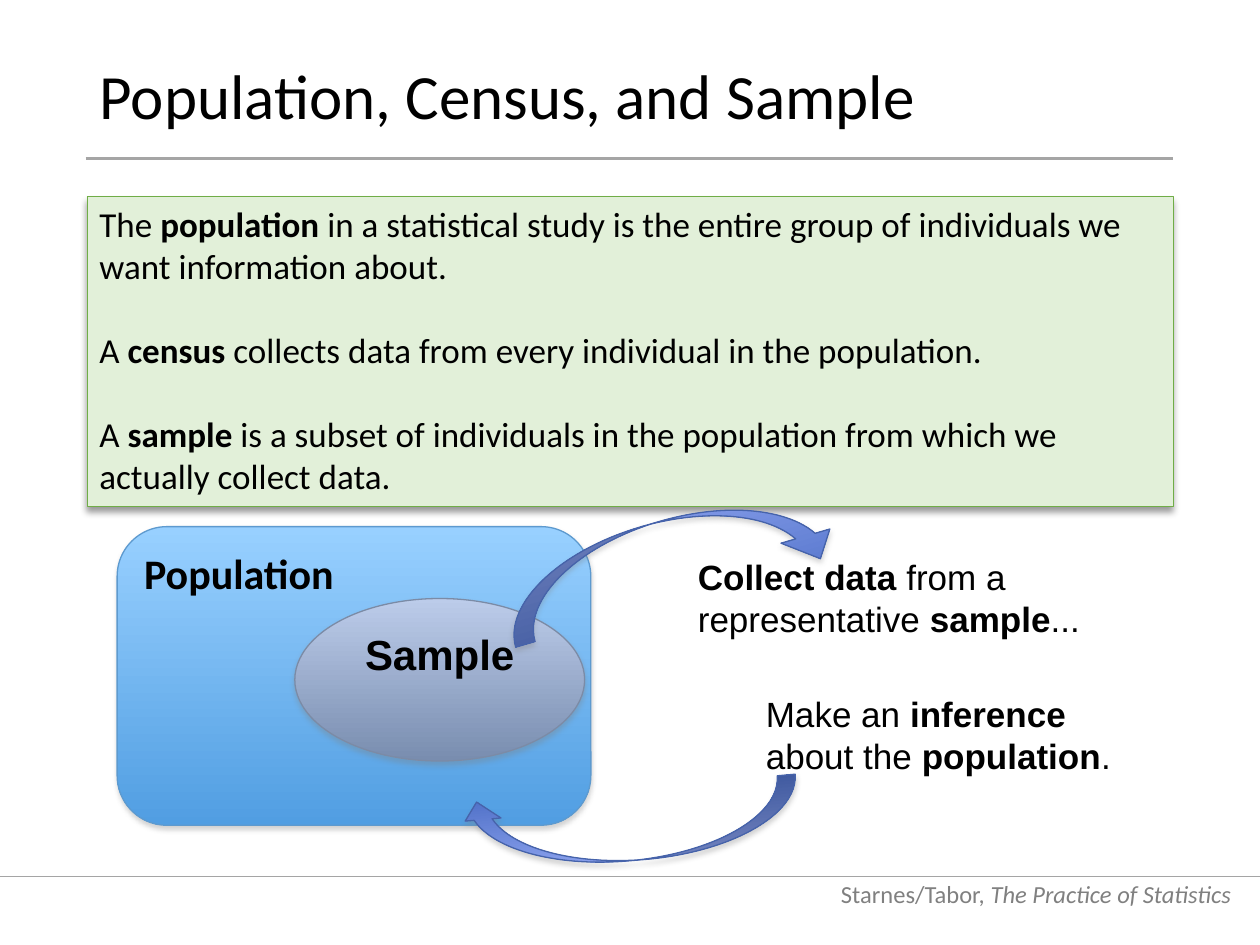
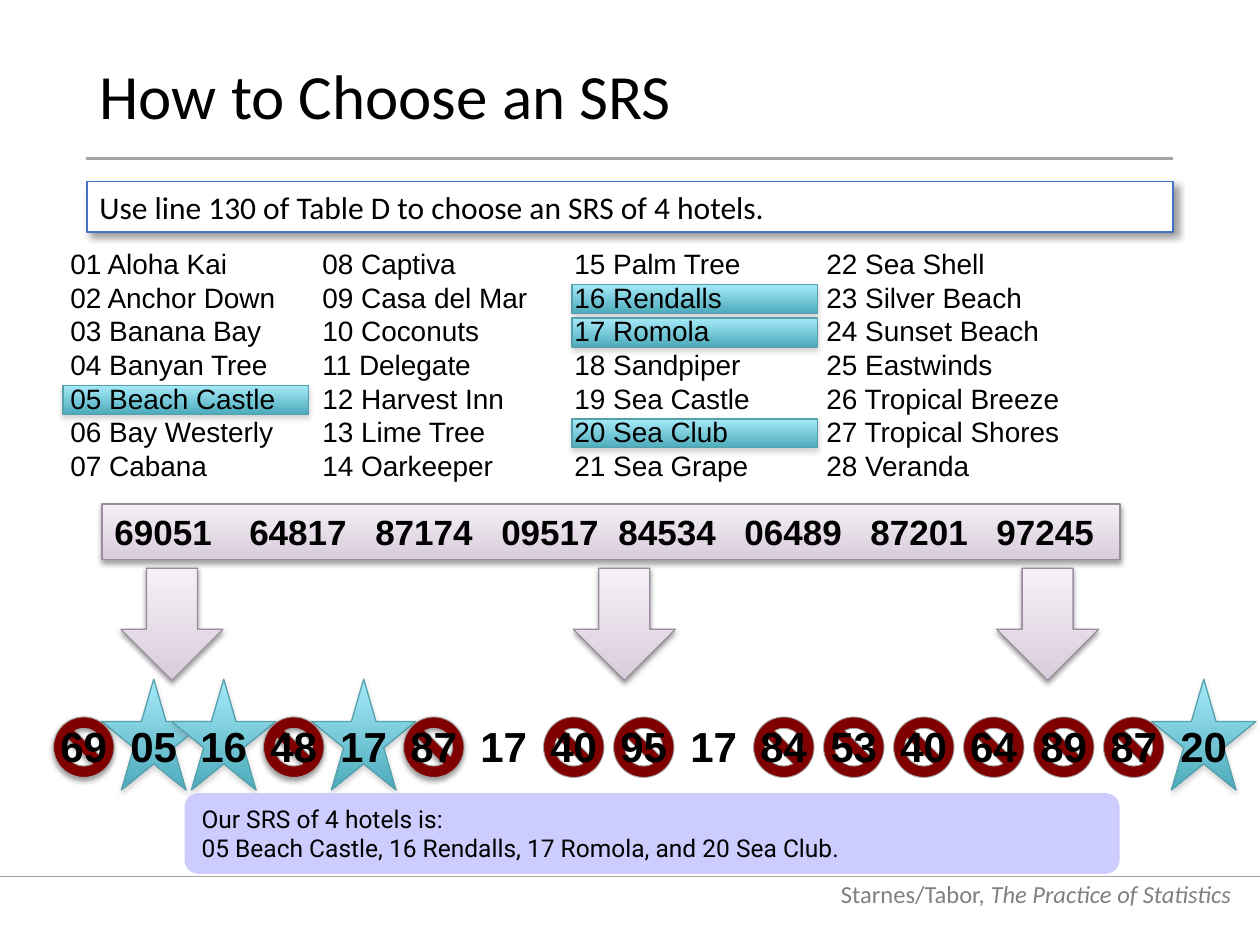
from lxml import etree
from pptx import Presentation, util as u
from pptx.dml.color import RGBColor
from pptx.enum import shapes, text
from pptx.oxml.ns import qn

COLORS = {
    "text": "000000", "footer": "808080", "rule": "A5A5A5",
    "green": "E2F0D9", "green_line": "70AD47",
    "white": "FFFFFF", "blue_line": "4472C4", "lilac": "CCCCFF",
    "red": "800000", "sign_line": "A1A1A1",
}
# Top colour, bottom colour, outline
GRADIENTS = {
    "sky": ("98D0FF", "519EE2", "5D9ACF"),
    "steel": ("BCCCEA", "798DAF", "7B8BA6"),
    "arrow": ("A1B3FB", "3B60BB", "4663AA"),
    "teal": ("A6EAF9", "4DABBB", "56A0AC"),
    "mauve": ("F4F1F5", "D9CCDC", "9A8C9D"),
}
# Colour, opacity %, blur, distance, direction
SOFT = ("808080", 35, 3.1, 1.8, 90)
DARK = ("000000", 38, 3.1, 1.6, 90)
BELOW = ("000000", 40, 4, 3, 90)
CORNER = ("000000", 40, 4, 3, 45)

WIDTH, HEIGHT = u.Inches(10), u.Inches(7.5)
COL, ROW = WIDTH / 100, HEIGHT / 75  # grid of 100 columns by 75 rows
SHAPE = shapes.MSO_SHAPE

HOTELS = [
    "Aloha Kai", "Anchor Down", "Banana Bay", "Banyan Tree", "Beach Castle",
    "Bay Westerly", "Cabana", "Captiva", "Casa del Mar", "Coconuts",
    "Delegate", "Harvest Inn", "Lime Tree", "Oarkeeper", "Palm Tree",
    "Rendalls", "Romola", "Sandpiper", "Sea Castle", "Sea Club", "Sea Grape",
    "Sea Shell", "Silver Beach", "Sunset Beach", "Eastwinds",
    "Tropical Breeze", "Tropical Shores", "Veranda",
]
PER_COLUMN = 7
CHOSEN = [5, 16, 17, 20]
DIGITS = ["69051", "64817", "87174", "09517", "84534", "06489", "87201", "97245"]
DRAWS = "69 05 16 48 17 87 17 40 95 17 84 53 40 64 89 87 20".split()


def rgb(name):
    return RGBColor.from_string(COLORS.get(name, name))


def inside(box, left, top, width, height):
    """Place a part relative to the corner of a region."""
    return box[0] + left, box[1] + top, width, height


def emu(box):
    return [round(n * unit) for n, unit in zip(box, (COL, ROW, COL, ROW))]


def add_shadow(sp, color, opacity, blur, distance, direction):
    effects = sp._element.spPr.find(qn("a:effectLst"))
    outer = etree.SubElement(
        effects, qn("a:outerShdw"), blurRad=str(u.Pt(blur)),
        dist=str(u.Pt(distance)), dir=str(direction * 60000), rotWithShape="0")
    clr = etree.SubElement(outer, qn("a:srgbClr"), val=color)
    etree.SubElement(clr, qn("a:alpha"), val=str(opacity * 1000))


def add_shape(s, kind, box, fill, line=None, weight=0.75, shadow=None):
    sp = s.shapes.add_shape(kind, *emu(box))
    if fill in GRADIENTS:
        *stops, line = GRADIENTS[fill]
        sp.fill.gradient()
        sp.fill.gradient_angle = 270
        for stop, color in zip(sp.fill.gradient_stops, stops):
            stop.color.rgb = rgb(color)
            stop.position = stops.index(color)
    else:
        sp.fill.solid()
        sp.fill.fore_color.rgb = rgb(fill)
    sp.line.color.rgb = rgb(line)
    sp.line.width = u.Pt(weight)
    sp.shadow.inherit = False
    if shadow:
        add_shadow(sp, *shadow)
    return sp


def add_text(s, box, *args, **kwargs):
    sp = s.shapes.add_textbox(*emu(box))
    write(sp, *args, **kwargs)
    return sp


def write(sp, lines, size, font="Calibri", color="text", bold=None, gap=0,
          align=text.PP_ALIGN.LEFT, tabs=(), emphasis="bold"):
    """Fill a shape with paragraphs; parts between asterisks are emphasised."""
    tf = sp.text_frame
    tf.word_wrap = True
    tf.vertical_anchor = text.MSO_ANCHOR.TOP
    for i, line in enumerate(lines):
        p = tf.add_paragraph() if i else tf.paragraphs[0]
        if tabs:
            tab_list = etree.SubElement(p._p.get_or_add_pPr(), qn("a:tabLst"))
            for stop in tabs:
                etree.SubElement(tab_list, qn("a:tab"), pos=str(int(stop)), algn="l")
        p.alignment = align
        if i and gap:
            p.space_before = u.Pt(gap)
        p.font.size, p.font.name, p.font.bold = u.Pt(size), font, bold
        p.font.color.rgb = rgb(color)
        for n, part in enumerate(line.split("*")):
            if part:
                r = p.add_run()
                r.text = part
                if n % 2:
                    setattr(r.font, emphasis, True)


def add_rule(s, left, right, top, weight):
    x1, y, x2, _ = emu((left, top, right, 0))
    line = s.shapes.add_connector(shapes.MSO_CONNECTOR.STRAIGHT, x1, y, x2, y)
    line.line.color.rgb = rgb("rule")
    line.line.width = u.Pt(weight)
    etree.SubElement(line._element.spPr, qn("a:effectLst"))


def add_slide(prs, title):
    """Slide with the shared title, rules and footer."""
    s = prs.slides.add_slide(prs.slide_layouts.get_by_name("Title Only"))
    sp = s.shapes.title
    sp.left, sp.top, sp.width, sp.height = emu((6.9, 4, 86.2, 7.8))
    write(sp, [title], 36)
    sp.text_frame.vertical_anchor = text.MSO_ANCHOR.MIDDLE
    sp.text_frame.paragraphs[0].line_spacing = 0.9
    add_rule(s, 6.8, 93.1, 12.6, 1.5)
    add_rule(s, 0, 100, 69.6, 0.5)
    footer = add_text(s, (64.7, 68.6, 34, 4),
                      ["Starnes/Tabor, *The Practice of Statistics*"], 14,
                      color="footer", align=text.PP_ALIGN.RIGHT, emphasis="italic")
    footer.text_frame.vertical_anchor = text.MSO_ANCHOR.BOTTOM
    return s


# Regions of the population slide
def add_definitions(s, box):
    sp = add_shape(s, SHAPE.RECTANGLE, box, "green", "green_line", 0.5, BELOW)
    write(sp, [
        "The *population* in a statistical study is the entire group of "
        "individuals we want information about.",
        "A *census* collects data from every individual in the population.",
        "A *sample* is a subset of individuals in the population from which "
        "we actually collect data.",
    ], 20, gap=24)


def add_curved_arrow(s, box, rotation, adjustments):
    sp = add_shape(s, SHAPE.CURVED_DOWN_ARROW, box, "arrow", shadow=SOFT)
    sp.rotation = rotation
    for i, value in enumerate(adjustments):
        sp.adjustments[i] = value


def add_inference_diagram(s, box):
    population = add_shape(s, SHAPE.ROUNDED_RECTANGLE,
                           inside(box, 0, 0.5, 37.6, 23.7), "sky", shadow=SOFT)
    write(population, ["Population"], 24, bold=True)
    sample = add_shape(s, SHAPE.OVAL, inside(box, 14.1, 6.2, 23, 12.9),
                       "steel", shadow=SOFT)
    write(sample, ["Sample"], 24, "Arial", bold=True, align=text.PP_ALIGN.CENTER)
    add_curved_arrow(s, inside(box, 30.2, 0, 27.2, 6.4), 343.8, (0.25, 0.63, 0.32))
    add_text(s, inside(box, 45.1, 2.3, 33.8, 7.7),
             ["*Collect data* from a representative *sample*..."], 20, "Arial")
    add_text(s, inside(box, 50.5, 13.2, 31, 7.7),
             ["Make an *inference* about the *population*."], 20, "Arial")
    add_curved_arrow(s, inside(box, 27.3, 21.3, 26.8, 5.7), 175, (0.25, 0.5, 0.25))


# Regions of the random sample slide
def add_prompt(s, box):
    sp = add_shape(s, SHAPE.RECTANGLE, box, "white", "blue_line", 1, CORNER)
    write(sp, ["Use line 130 of Table D to choose an SRS of 4 hotels."], 18)


def add_hotel_list(s, box):
    for number in CHOSEN:
        col, row = divmod(number - 1, PER_COLUMN)
        add_shape(s, SHAPE.RECTANGLE,
                  inside(box, 0.4 + 20.2 * col, 0.8 + 2.67 * row, 19.5, 2.3),
                  "teal", shadow=SOFT)
    labels = [f"{n:02} {hotel}" for n, hotel in enumerate(HOTELS, 1)]
    lines = ["\t".join(labels[row::PER_COLUMN]) for row in range(PER_COLUMN)]
    add_text(s, box, lines, 16, "Arial", tabs=[20 * COL * n for n in (1, 2, 3)])


def add_digit_bar(s, box):
    bar = add_shape(s, SHAPE.RECTANGLE, inside(box, 0, 0, 80.8, 4.4),
                    "mauve", shadow=DARK)
    stops = [10.7, 20.7, 30.7, 40, 50, 60, 70]
    write(bar, ["\t".join(DIGITS)], 20, "Arial", bold=True,
          tabs=[stop * COL for stop in stops])
    for left in (1.5, 37.4, 71):
        add_shape(s, SHAPE.DOWN_ARROW, inside(box, left, 5.1, 8.1, 8.9),
                  "mauve", shadow=DARK)


def add_draws(s, box):
    pitch = u.Pt(40)  # two bold digits and the gap after them
    keep = {f"{n:02}" for n in CHOSEN}
    stars, signs, seen = [], [], set()
    for i, draw in enumerate(DRAWS):
        center = 2.85 + i * pitch / COL
        if draw not in keep:
            signs.append(center)
        elif draw not in seen:
            stars.append(center)
            seen.add(draw)
    for center in stars:
        add_shape(s, SHAPE.STAR_5_POINT, inside(box, center - 4.15, -2.8, 8.3, 8.8),
                  "teal", shadow=SOFT)
    for i, center in enumerate(signs):
        add_shape(s, SHAPE.NO_SYMBOL, inside(box, center - 2.4, 0.2, 4.8, 4.8),
                  "red", "sign_line", 0.5, DARK if i < 3 else None)
    add_text(s, box, ["\t".join(DRAWS)], 24, "Arial", bold=True,
             tabs=[pitch * i for i in range(1, len(DRAWS))])


def add_answer(s, box):
    sp = add_shape(s, SHAPE.ROUNDED_RECTANGLE, box, "lilac", "lilac")
    *first, last = [f"{n:02} {HOTELS[n - 1]}" for n in CHOSEN]
    write(sp, ["Our SRS of 4 hotels is:", f"{', '.join(first)}, and {last}."],
          14, "Roboto")


def main():
    prs = Presentation()
    prs.slide_width, prs.slide_height = WIDTH, HEIGHT

    s = add_slide(prs, "Population, Census, and Sample")
    add_definitions(s, (6.9, 15.6, 86.2, 24.6))
    add_inference_diagram(s, (9.3, 41.3, 82.5, 27))

    s = add_slide(prs, "How to Choose an SRS")
    add_prompt(s, (6.9, 14.4, 86.2, 4))
    add_hotel_list(s, (4.6, 19.1, 82.9, 19.9))
    add_draws(s, (3.8, 56.7, 95.9, 5))
    add_digit_bar(s, (8.1, 40, 80.8, 14))
    add_answer(s, (14.7, 63, 74.1, 6.3))

    prs.save("out.pptx")


if __name__ == "__main__":
    main()
